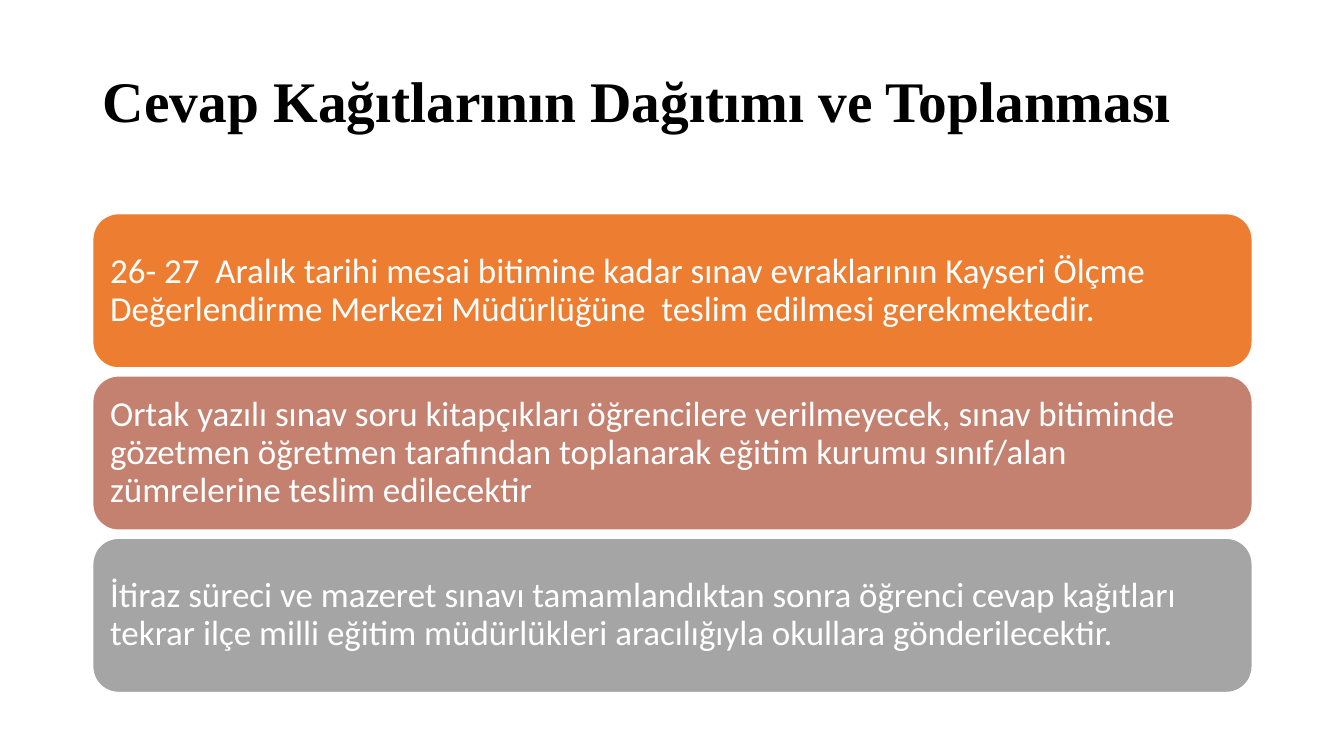
from pptx import Presentation
from pptx.dml.color import RGBColor as Rgb
from pptx.enum.shapes import MSO_SHAPE as Shape
from pptx.enum.text import MSO_ANCHOR as Anchor, MSO_AUTO_SIZE as Fit, PP_ALIGN as Align
from pptx.util import Pt

PX = 9144
HUES = {"ink": "000000", "white": "FFFFFF", "orange": "ED7D31",
        "rose": "C48170", "gray": "A5A5A5"}
HEAD = {"name": "Times New Roman", "size": Pt(41), "bold": True}
BODY = {"name": "Calibri", "size": Pt(25), "bold": False}
CARDS = [
    ("orange", "26- 27  Aralık tarihi mesai bitimine kadar sınav evraklarının Kayseri Ölçme "
               "Değerlendirme Merkezi Müdürlüğüne  teslim edilmesi gerekmektedir."),
    ("rose", "Ortak yazılı sınav soru kitapçıkları öğrencilere verilmeyecek, sınav bitiminde "
             "gözetmen öğretmen tarafından toplanarak eğitim kurumu sınıf/alan "
             "zümrelerine teslim edilecektir"),
    ("gray", "İtiraz süreci ve mazeret sınavı tamamlandıktan sonra öğrenci cevap kağıtları "
             "tekrar ilçe milli eğitim müdürlükleri aracılığıyla okullara gönderilecektir."),
]


def tint(name):
    return Rgb.from_string(HUES[name])


def put(item, attrs):
    for key, value in attrs.items():
        setattr(item, key, value)


def write(shape, text, font, hue, frame):
    body = shape.text_frame
    body.text = text
    put(body, {"word_wrap": True, "auto_size": Fit.NONE, **frame})
    para = body.paragraphs[0]
    put(para, {"alignment": Align.LEFT, "line_spacing": 0.9})
    run = para.runs[0]
    put(run.font, font)
    run.font.color.rgb = tint(hue)


def title(slide, box, text):
    shape = slide.shapes.title
    put(shape, dict(zip(("left", "top", "width", "height"), (n * PX for n in box))))
    write(shape, text, HEAD, "ink", {"vertical_anchor": Anchor.BOTTOM})


def card(slide, box, hue, text):
    shape = slide.shapes.add_shape(Shape.ROUNDED_RECTANGLE, *(n * PX for n in box))
    shape.shadow.inherit = False
    shape.fill.solid()
    shape.fill.fore_color.rgb = tint(hue)
    shape.line.color.rgb = tint("white")
    shape.line.width = Pt(1)
    sides = ("left", "right", "top", "bottom")
    frame = {f"margin_{side}": 10 * PX for side in sides}
    write(shape, text, BODY, "white", {"vertical_anchor": Anchor.MIDDLE, **frame})


def stack(slide, box, cards, gap):
    left, top, width, height = box
    tall = (height - gap * (len(cards) - 1)) // len(cards)
    for i, (hue, text) in enumerate(cards):
        card(slide, (left, top + i * (tall + gap), width, tall), hue, text)


def main():
    deck = Presentation()
    put(deck, {"slide_width": 1333 * PX, "slide_height": 750 * PX})
    slide = deck.slides.add_slide(deck.slide_layouts[5])
    title(slide, (92, 28, 1149, 111), "Cevap Kağıtlarının Dağıtımı ve Toplanması")
    stack(slide, (92, 212, 1150, 475), CARDS, 8)
    deck.save("out.pptx")


if __name__ == "__main__":
    main()
